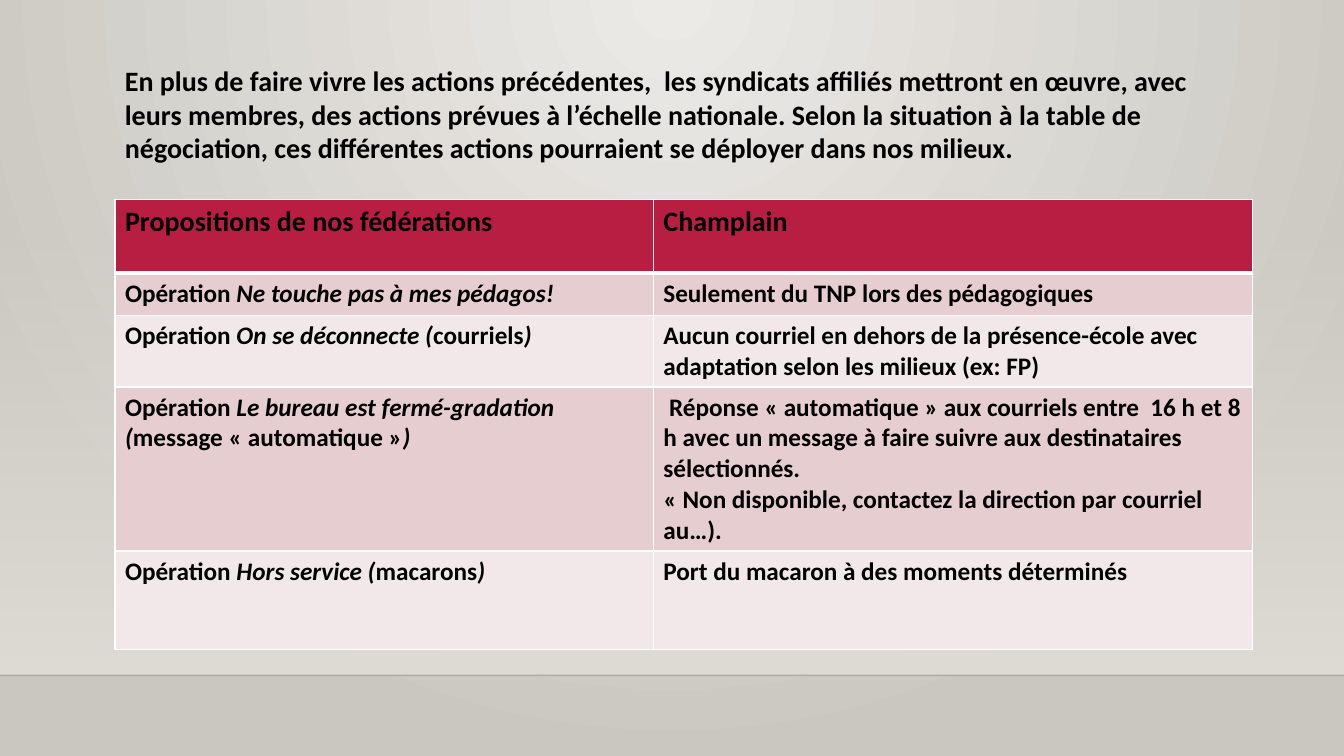
import lxml.etree
import pptx
import pptx.dml.color
import pptx.enum.dml
import pptx.enum.shapes
import pptx.oxml
import pptx.oxml.ns
import pptx.util
from pptx.util import Inches

INTRO = (
    "En plus de faire vivre les actions précédentes,  les syndicats affiliés mettront en œuvre, "
    "avec leurs membres, des actions prévues à l’échelle nationale. Selon la situation à la table "
    "de négociation, ces différentes actions pourraient se déployer dans nos milieux."
)

# Each cell is a list of paragraphs, each paragraph a list of (text, italic) runs.
HEADINGS = [
    [[("Propositions de nos fédérations", False)]],
    [[("Champlain", False)]],
]
OPERATIONS = [
    [
        [[("Opération ", False), ("Ne touche pas à mes pédagos!", True)]],
        [[("Seulement du TNP lors des pédagogiques", False)]],
    ],
    [
        [[("Opération ", False), ("On se déconnecte (", True), ("courriels", False), (")", True)]],
        [[("Aucun courriel en dehors de la présence-école avec adaptation selon les milieux "
           "(ex: FP)", False)]],
    ],
    [
        [
            [("Opération ", False), ("Le bureau est fermé-gradation", True)],
            [("(", True), ("message « automatique »", False), (")", True)],
        ],
        [
            [(" Réponse « automatique » aux courriels entre  16 h et 8 h avec un message à faire "
              "suivre aux destinataires sélectionnés.", False)],
            [("« Non disponible, contactez la direction par courriel au…).", False)],
        ],
    ],
    [
        [[("Opération ", False), ("Hors service (", True), ("macarons", False), (")", True)]],
        [[("Port du macaron à des moments déterminés", False)]],
    ],
]

COLORS = {
    "text": "000000",
    "heading": "B71E42",
    "odd row": "E6CDCF",
    "even row": "F3E8E9",
    "border": "FFFFFF",
    "centre": "ECEAE7",
    "edge": "CAC7C1",
    "wall": "DFDBD5",
    "shelf": "000001",
}
FONT = "Calibri"
HEADING_SIZE, BODY_SIZE = 20, 18
SLIDE_WIDTH, SLIDE_HEIGHT = 13.33, 7.5
LEFT, INTRO_TOP, INTRO_HEIGHT = 1.14, 0.58, 1.11
TABLE_TOP = 1.98
COLUMN_WIDTHS = [5.34, 5.94]
ROW_HEIGHTS = [0.73, 0.42, 0.7, 1.62, 0.98]
WALL_TOP, SHELF_TOP = 2.21, 6.7

NS = pptx.oxml.ns.nsdecls("a")
qn = pptx.oxml.ns.qn


def rgb(name):
    return pptx.dml.color.RGBColor.from_string(COLORS[name])


def gradient(start, end, direction, start_alpha=100):
    """Two-stop gradient fill element; direction is its a:path or a:lin markup."""
    return pptx.oxml.parse_xml(
        f'<a:gradFill {NS} rotWithShape="1"><a:gsLst>'
        f'<a:gs pos="0"><a:srgbClr val="{COLORS[start]}">'
        f'<a:alpha val="{start_alpha * 1000}"/></a:srgbClr></a:gs>'
        f'<a:gs pos="100000"><a:srgbClr val="{COLORS[end]}"/></a:gs>'
        f'</a:gsLst>{direction}</a:gradFill>'
    )


def replace_gradient(fill, parent, new_gradient):
    fill.gradient()
    old = parent.find(qn("a:gradFill"))
    parent.replace(old, new_gradient)


def write_paragraphs(frame, paragraphs, size):
    for index, runs in enumerate(paragraphs):
        paragraph = frame.paragraphs[0] if index == 0 else frame.add_paragraph()
        for text, italic in runs:
            run = paragraph.add_run()
            run.text = text
            run.font.name = FONT
            run.font.size = pptx.util.Pt(size)
            run.font.bold = True
            run.font.italic = italic
            run.font.color.rgb = rgb("text")


def set_borders(cell, bottom):
    """White borders, 1 pt except the bottom one; they must precede the cell fill."""
    properties = cell._tc.get_or_add_tcPr()
    for index, (side, points) in enumerate([("L", 1), ("R", 1), ("T", 1), ("B", bottom)]):
        properties.insert(index, pptx.oxml.parse_xml(
            f'<a:ln{side} {NS} w="{pptx.util.Pt(points)}"><a:solidFill>'
            f'<a:srgbClr val="{COLORS["border"]}"/></a:solidFill></a:ln{side}>'
        ))


def draw_backdrop(slide):
    fill = slide.background.fill
    fill.gradient()
    properties = slide._element.cSld.find(qn("p:bg")).find(qn("p:bgPr"))
    replace_gradient(fill, properties, gradient(
        "centre", "edge",
        '<a:path path="circle"><a:fillToRect l="43000" t="0" r="43000" b="100000"/></a:path>',
    ))

    wall = slide.shapes.add_shape(
        pptx.enum.shapes.MSO_SHAPE.RECTANGLE, 0, Inches(WALL_TOP),
        Inches(SLIDE_WIDTH), Inches(SHELF_TOP - WALL_TOP),
    )
    wall.shadow.inherit = False
    wall.line.fill.background()
    replace_gradient(wall.fill, wall._element.spPr, gradient(
        "wall", "wall", '<a:lin ang="5400000" scaled="0"/>', start_alpha=0))

    shelf = slide.shapes.add_connector(
        pptx.enum.shapes.MSO_CONNECTOR.STRAIGHT,
        0, Inches(SHELF_TOP), Inches(SLIDE_WIDTH), Inches(SHELF_TOP),
    )
    shelf.line.width = pptx.util.Pt(1)
    shelf.line.color.rgb = rgb("shelf")
    shelf_color = shelf._element.spPr.find(".//" + qn("a:srgbClr"))
    lxml.etree.SubElement(shelf_color, qn("a:alpha"), val="20000")
    lxml.etree.SubElement(shelf._element.spPr, qn("a:effectLst"))


def draw_operations(slide):
    rows = [HEADINGS] + OPERATIONS
    table = slide.shapes.add_table(
        len(rows), len(COLUMN_WIDTHS), Inches(LEFT), Inches(TABLE_TOP),
        Inches(sum(COLUMN_WIDTHS)), Inches(sum(ROW_HEIGHTS)),
    ).table
    for column, width in zip(table.columns, COLUMN_WIDTHS):
        column.width = Inches(width)
    for index, (row, height, contents) in enumerate(zip(table.rows, ROW_HEIGHTS, rows)):
        row.height = Inches(height)
        is_heading = index == 0
        color = "heading" if is_heading else "odd row" if index % 2 else "even row"
        for cell, paragraphs in zip(row.cells, contents):
            write_paragraphs(cell.text_frame, paragraphs,
                             HEADING_SIZE if is_heading else BODY_SIZE)
            cell.fill.solid()
            cell.fill.fore_color.rgb = rgb(color)
            set_borders(cell, bottom=3 if is_heading else 1)


def main():
    presentation = pptx.Presentation()
    presentation.slide_width = Inches(SLIDE_WIDTH)
    presentation.slide_height = Inches(SLIDE_HEIGHT)
    slide = presentation.slides.add_slide(presentation.slide_layouts[6])

    draw_backdrop(slide)
    draw_operations(slide)
    intro = slide.shapes.add_textbox(
        Inches(LEFT), Inches(INTRO_TOP), Inches(sum(COLUMN_WIDTHS)), Inches(INTRO_HEIGHT))
    intro.text_frame.word_wrap = True
    write_paragraphs(intro.text_frame, [[(INTRO, False)]], HEADING_SIZE)

    presentation.save("out.pptx")


if __name__ == "__main__":
    main()
